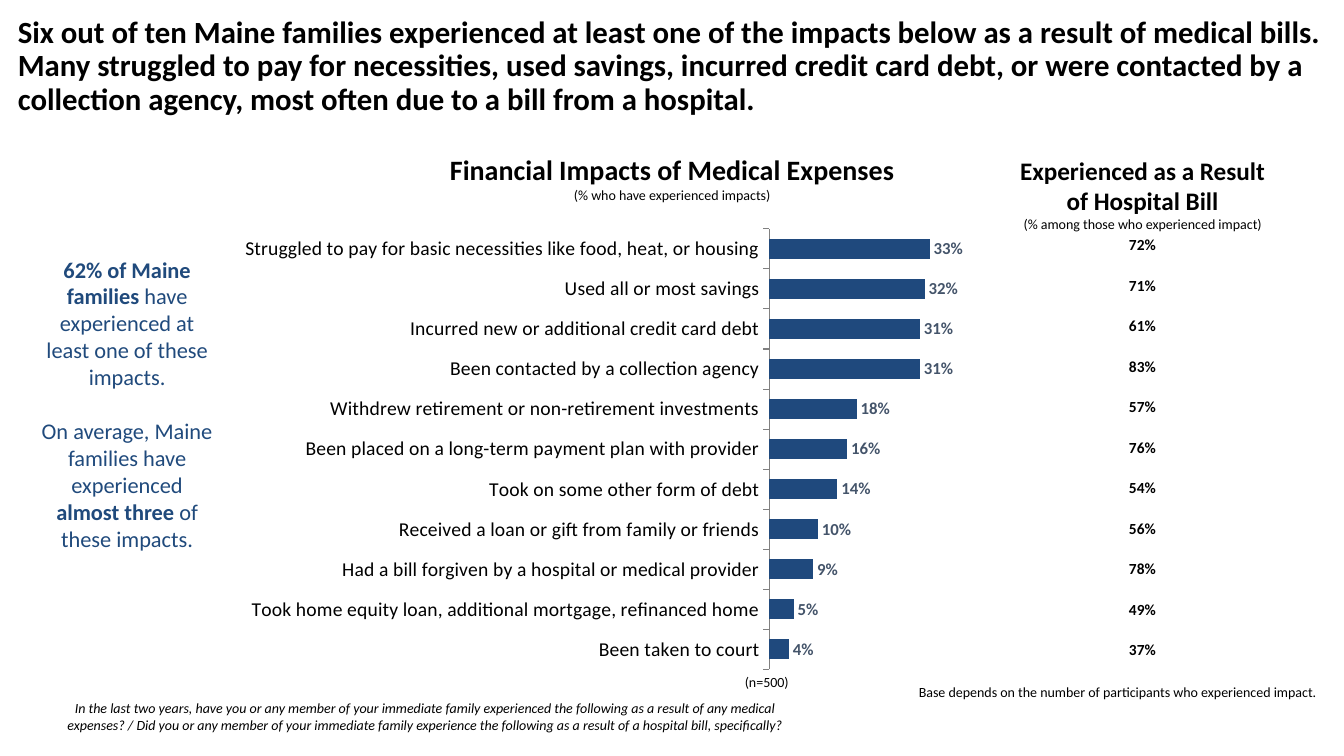
from dataclasses import dataclass

import pptx
import pptx.chart.data
import pptx.dml.color
import pptx.enum.chart
import pptx.enum.text
import pptx.oxml
import pptx.oxml.ns
import pptx.slide
import pptx.util

Cm = pptx.util.Cm
Pt = pptx.util.Pt
ALIGN = pptx.enum.text.PP_ALIGN
ANCHOR = pptx.enum.text.MSO_ANCHOR

FONT = "Calibri"
COLORS = {"text": "000000", "bar": "1F497D", "value": "44546A",
          "callout": "204A7C", "axis": "808080"}


@dataclass
class Run:
    text: str
    size: float = 10
    bold: bool = False
    italic: bool = False
    color: str = "text"


@dataclass
class Para:
    runs: list[Run]
    align: ALIGN = ALIGN.CENTER
    leading: float | pptx.util.Length | None = None
    before: float = 0
    after: float = 0


@dataclass
class Box:
    left: float
    top: float
    width: float
    height: float
    paras: list[Para]
    anchor: ANCHOR = ANCHOR.TOP


@dataclass
class Impact:
    label: str
    share: float
    clinic: str


IMPACTS = [
    Impact("Struggled to pay for basic necessities like food, heat, or housing", 0.33, "72%"),
    Impact("Used all or most savings", 0.32, "71%"),
    Impact("Incurred new or additional credit card debt", 0.31, "61%"),
    Impact("Been contacted by a collection agency", 0.31, "83%"),
    Impact("Withdrew retirement or non-retirement investments", 0.18, "57%"),
    Impact("Been placed on a long-term payment plan with provider", 0.16, "76%"),
    Impact("Took on some other form of debt", 0.14, "54%"),
    Impact("Received a loan or gift from family or friends", 0.10, "56%"),
    Impact("Had a bill forgiven by a hospital or medical provider", 0.09, "78%"),
    Impact("Took home equity loan, additional mortgage, refinanced home", 0.05, "49%"),
    Impact("Been taken to court", 0.04, "37%"),
]

BOXES = [
    # Title
    Box(0.2, 0.08, 33.65, 3.18, [Para([Run(
        "Six out of ten Maine families experienced at least one of the impacts below "
        "as a result of medical bills. Many struggled to pay for necessities, used "
        "savings, incurred credit card debt, or were contacted by a collection agency, "
        "most often due to a bill from a hospital.", 22, True)],
        ALIGN.LEFT, Pt(24), after=3)], ANCHOR.MIDDLE),
    # Survey question
    Box(1.09, 17.5, 19.23, 1.55, [Para([Run(
        "In the last two years, have you or any member of your immediate family "
        "experienced the following as a result of any medical expenses? / Did you or "
        "any member of your immediate family experience the following as a result of "
        "a hospital bill, specifically?", italic=True)])]),
    # Sample size
    Box(18.52, 16.84, 1.8, 0.69, [Para([Run("(n=500)")], ALIGN.LEFT)]),
    # Chart heading
    Box(5.61, 3.86, 22.66, 1.42, [
        Para([Run("Financial Impacts of Medical Expenses", 20, True)], leading=0.85),
        Para([Run("(% who have experienced impacts)")])]),
    # Column heading
    Box(25.2, 3.78, 7.19, 3.02, [
        Para([Run("Experienced as a Result of Hospital Bill", 18, True)]),
        Para([Run("(% among those who experienced impact)")])]),
    # Base note
    Box(22.78, 17.09, 10.64, 0.69, [Para([Run(
        "Base depends on the number of participants who experienced impact.")],
        ALIGN.RIGHT)]),
    # Callout
    Box(0.79, 6.32, 4.83, 7.77, [
        Para([Run("62% of Maine families ", 16, True, color="callout"),
              Run("have experienced at least one of these impacts.", 16, color="callout")]),
        Para([Run("On average, Maine families have experienced", 16, color="callout"),
              Run(" almost three ", 16, True, color="callout"),
              Run("of these impacts.", 16, color="callout")], before=19.5)]),
]


def paint(name: str) -> pptx.dml.color.RGBColor:
    return pptx.dml.color.RGBColor.from_string(COLORS[name])


def style(font, size: float, bold: bool = False, color: str = "text") -> None:
    font.name = FONT
    font.size = Pt(size)
    font.bold = bold
    font.color.rgb = paint(color)


def write(frame, paras: list[Para]) -> None:
    for i, para in enumerate(paras):
        line = frame.add_paragraph() if i else frame.paragraphs[0]
        line.alignment = para.align
        line.line_spacing = para.leading
        line.space_before = Pt(para.before)
        line.space_after = Pt(para.after)
        for part in para.runs:
            run = line.add_run()
            run.text = part.text
            style(run.font, part.size, part.bold, part.color)
            run.font.italic = part.italic


def add_box(slide: pptx.slide.Slide, box: Box) -> None:
    shape = slide.shapes.add_textbox(
        Cm(box.left), Cm(box.top), Cm(box.width), Cm(box.height))
    frame = shape.text_frame
    frame.word_wrap = True
    frame.vertical_anchor = box.anchor
    write(frame, box.paras)


def place_plot(chart, x: float, y: float, w: float, h: float) -> None:
    sizes = "".join(f'<c:{tag} val="{val}"/>' for tag, val in zip("xywh", (x, y, w, h)))
    layout = pptx.oxml.parse_xml(
        f'<c:layout {pptx.oxml.ns.nsdecls("c")}><c:manualLayout>'
        '<c:layoutTarget val="inner"/><c:xMode val="edge"/><c:yMode val="edge"/>'
        f'{sizes}</c:manualLayout></c:layout>')
    area = chart._chartSpace.chart.plotArea
    for old in area.findall(pptx.oxml.ns.qn("c:layout")):
        area.remove(old)
    area.insert(0, layout)


def add_bars(slide: pptx.slide.Slide, items: list[Impact]) -> None:
    kinds = pptx.enum.chart
    data = pptx.chart.data.CategoryChartData(number_format="0%")
    data.categories = [item.label for item in items]
    data.add_series("Series 1", [item.share for item in items])
    chart = slide.shapes.add_chart(
        kinds.XL_CHART_TYPE.BAR_CLUSTERED,
        Cm(4.8), Cm(3.43), Cm(27.74), Cm(13.51), data).chart
    chart.has_legend = False
    chart.has_title = False
    style(chart.font, 10)
    place_plot(chart, 0.526, 0.173, 0.441, 0.822)

    # Axes
    names = chart.category_axis
    names.reverse_order = True
    names.major_tick_mark = kinds.XL_TICK_MARK.OUTSIDE
    names.format.line.color.rgb = paint("axis")
    style(names.tick_labels.font, 14)
    scale = chart.value_axis
    scale.minimum_scale, scale.maximum_scale = 0, 1
    scale.has_major_gridlines = False
    scale.visible = False

    # Bars and labels
    plot = chart.plots[0]
    plot.gap_width = 100
    plot.vary_by_categories = False
    fill = plot.series[0].format.fill
    fill.solid()
    fill.fore_color.rgb = paint("bar")
    plot.has_data_labels = True
    labels = plot.data_labels
    labels.show_value = True
    labels.position = kinds.XL_LABEL_POSITION.OUTSIDE_END
    labels.number_format = "0%"
    labels.number_format_is_linked = False
    style(labels.font, 12, True, "value")


def add_rates(slide: pptx.slide.Slide, items: list[Impact]) -> None:
    table = slide.shapes.add_table(
        len(items), 1, Cm(27.94), Cm(5.66), Cm(1.7), Cm(1.02 * len(items))).table
    table.first_row = table.horz_banding = False
    for i, item in enumerate(items):
        cell = table.cell(i, 0)
        cell.fill.background()
        cell.vertical_anchor = ANCHOR.MIDDLE
        cell.margin_left = cell.margin_right = cell.margin_top = Cm(0.03)
        cell.margin_bottom = 0
        write(cell.text_frame, [Para([Run(item.clinic, 11, True)])])


def main() -> None:
    deck = pptx.Presentation()
    deck.slide_width, deck.slide_height = Cm(33.87), Cm(19.05)
    slide = deck.slides.add_slide(deck.slide_layouts[6])
    add_bars(slide, IMPACTS)
    add_rates(slide, IMPACTS)
    for box in BOXES:
        add_box(slide, box)
    deck.save("out.pptx")


if __name__ == "__main__":
    main()
